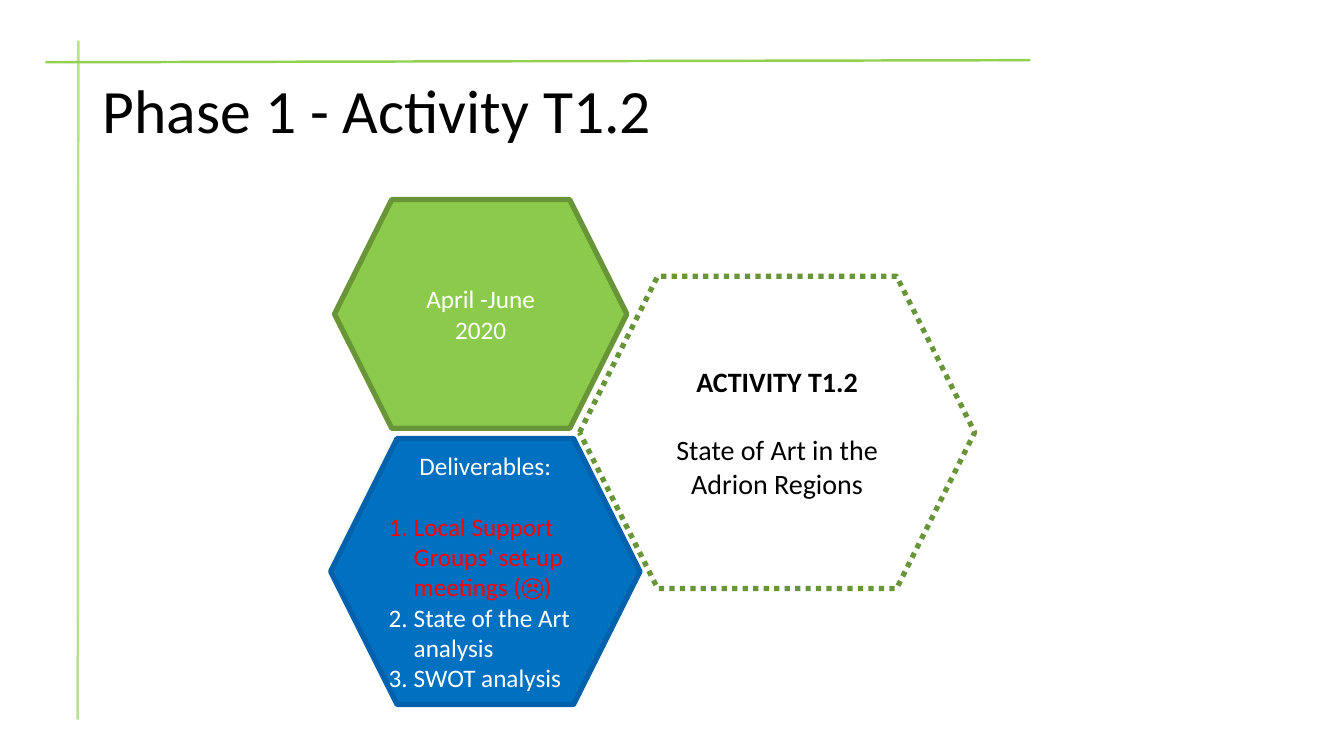
from lxml import etree
from pptx import Presentation
from pptx import util as u
from pptx.dml.color import RGBColor
from pptx.enum import dml, shapes, text
from pptx.oxml import ns

BLACK = RGBColor(0x00, 0x00, 0x00)
WHITE = RGBColor(0xFF, 0xFF, 0xFF)
RED = RGBColor(0xFF, 0x00, 0x00)
PALE_GREEN = RGBColor(0xB9, 0xDF, 0x93)
RULE_GREEN = RGBColor(0x92, 0xD0, 0x50)
GREEN = RGBColor(0x8B, 0xCA, 0x4B)
DARK_GREEN = RGBColor(0x67, 0x95, 0x37)
BLUE = RGBColor(0x00, 0x70, 0xC0)
DARK_BLUE = RGBColor(0x00, 0x62, 0xAC)


class ActivitySlide:
    font = "Calibri"
    outline = u.Pt(3.75)
    indent = u.Pt(18)

    def __init__(self, presentation):
        self.slide = presentation.slides.add_slide(presentation.slide_layouts[5])

    def run(self, paragraph, words, size, color, bold=False):
        run = paragraph.add_run()
        run.text = words
        run.font.name = self.font
        run.font.size = u.Pt(size)
        run.font.bold = bold
        run.font.color.rgb = color

    def rule(self, start, end, color):
        points = [u.Pt(value) for value in (*start, *end)]
        line = self.slide.shapes.add_connector(shapes.MSO_CONNECTOR.STRAIGHT, *points)
        line.line.color.rgb = color
        line.line.width = u.Pt(1.75)
        etree.SubElement(line._element.spPr, ns.qn("a:effectLst"))

    def title(self, words, left, top, width, height):
        title = self.slide.shapes.title
        title.left, title.top = u.Pt(left), u.Pt(top)
        title.width, title.height = u.Pt(width), u.Pt(height)
        frame = title.text_frame
        frame.word_wrap = True
        frame.auto_size = text.MSO_AUTO_SIZE.NONE
        frame.vertical_anchor = text.MSO_ANCHOR.MIDDLE
        paragraph = frame.paragraphs[0]
        paragraph.alignment = text.PP_ALIGN.LEFT
        paragraph.line_spacing = 0.9
        self.run(paragraph, words, 44, BLACK)

    def hexagon(self, left, top, width, height, border, fill=None, dash=None):
        box = [u.Pt(value) for value in (left, top, width, height)]
        shape = self.slide.shapes.add_shape(shapes.MSO_SHAPE.HEXAGON, *box)
        shape.shadow.inherit = False
        if fill is None:
            shape.fill.background()
        else:
            shape.fill.solid()
            shape.fill.fore_color.rgb = fill
        shape.line.color.rgb = border
        shape.line.width = self.outline
        if dash is not None:
            shape.line.dash_style = dash
        frame = shape.text_frame
        frame.word_wrap = True
        frame.vertical_anchor = text.MSO_ANCHOR.MIDDLE
        return frame

    def line(self, frame, words, size, color, bold=False, gap=0, numbered=False):
        paragraph = frame.paragraphs[0]
        if paragraph.runs:
            paragraph = frame.add_paragraph()
        paragraph.alignment = text.PP_ALIGN.LEFT if numbered else text.PP_ALIGN.CENTER
        if gap:
            paragraph.space_before = u.Pt(gap)
        if numbered:
            properties = paragraph._p.get_or_add_pPr()
            properties.set("marL", str(self.indent))
            properties.set("indent", str(-self.indent))
            number = etree.SubElement(properties, ns.qn("a:buAutoNum"))
            number.set("type", "arabicPeriod")
        self.run(paragraph, words, size, color, bold)


def main():
    presentation = Presentation()
    presentation.slide_width, presentation.slide_height = u.Pt(960), u.Pt(540)
    page = ActivitySlide(presentation)

    # Crossing rules and title
    page.rule((56, 29), (55.5, 514), PALE_GREEN)
    page.rule((32.5, 44.5), (736, 43), RULE_GREEN)
    page.title("Phase 1 - Activity T1.2", 66.25, 28.8, 828, 104.4)

    # Activity
    activity = page.hexagon(414, 197.3, 282.2, 223.2, DARK_GREEN,
                            dash=dml.MSO_LINE.ROUND_DOT)
    page.line(activity, "ACTIVITY T1.2", 20, BLACK, bold=True)
    page.line(activity, "State of Art in the Adrion Regions", 20, BLACK, gap=24.4)

    # Period
    period = page.hexagon(239, 142.6, 208.8, 163.4, DARK_GREEN, GREEN)
    for words in ("April -June", "2020"):
        page.line(period, words, 18, WHITE)

    # Deliverables
    deliverables = page.hexagon(236.2, 313.2, 221, 190.1, DARK_BLUE, BLUE)
    page.line(deliverables, "Deliverables:", 18, WHITE)
    for words, color, gap in (
        ("Local Support Groups' set-up meetings (☹)", RED, 22),
        ("State of the Art analysis", WHITE, 0),
        ("SWOT analysis", WHITE, 0),
    ):
        page.line(deliverables, words, 18, color, gap=gap, numbered=True)

    presentation.save("out.pptx")


if __name__ == "__main__":
    main()
